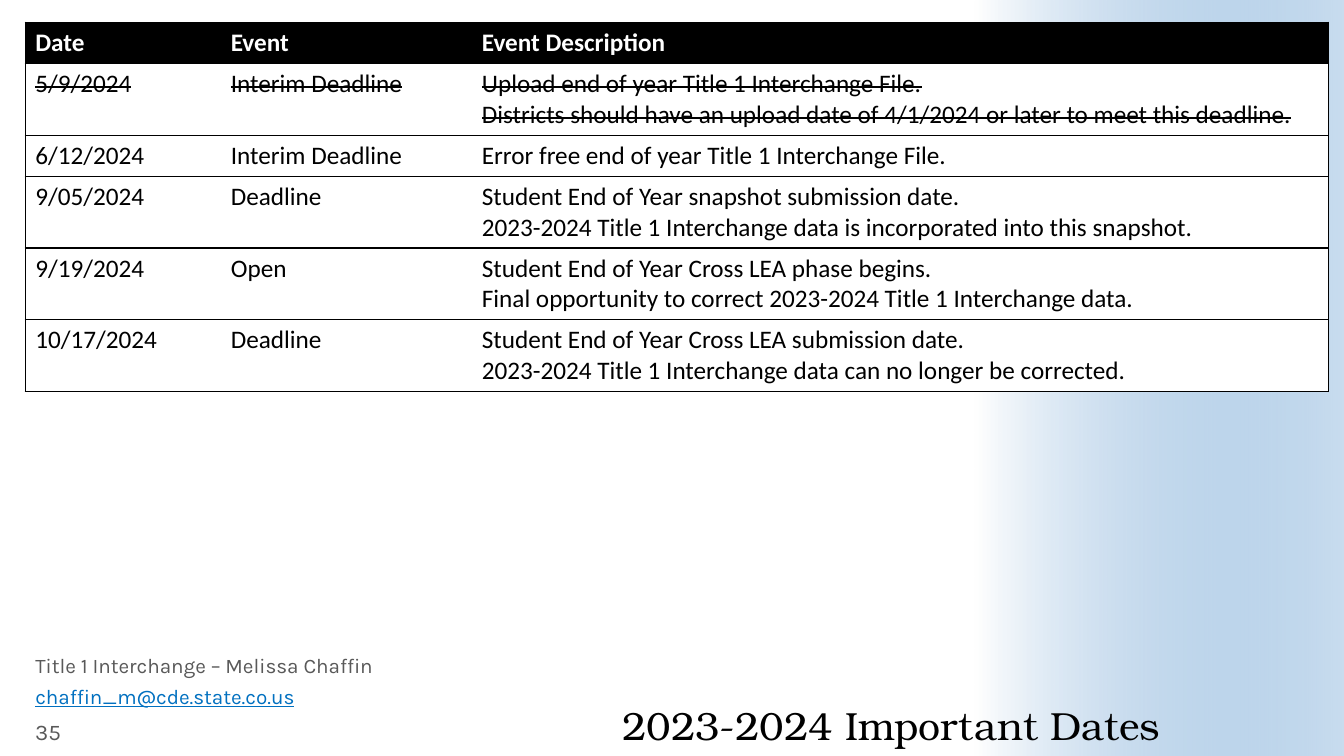
from dataclasses import dataclass

from lxml.etree import SubElement
from pptx import Presentation
from pptx.dml.color import RGBColor
from pptx.enum.shapes import MSO_SHAPE as Preset
from pptx.enum.text import MSO_ANCHOR as Anchor, MSO_AUTO_SIZE as AutoSize, PP_ALIGN as Align
from pptx.oxml.ns import qn
from pptx.util import Inches, Pt


@dataclass(frozen=True)
class Theme:
    black: str = "000000"
    white: str = "FFFFFF"
    blue: str = "488BC9"
    grey: str = "595959"
    link: str = "0070C0"
    title_font: str = "TeX Gyre Bonum"
    table_font: str = "Calibri"
    footer_font: str = "Karla"
    title_size: float = 28
    table_size: float = 18
    contact_size: float = 14.8
    number_size: float = 16


THEME = Theme()
WIDTH, HEIGHT = 13.33, 7.5
MARGIN = 0.25
COLUMNS = (1.94, 2.49, 8.5)
LINE_HEIGHT, ROW_PADDING = 0.3, 0.11

HEADINGS = ("Date", "Event", "Event Description")
PAST_DATES = {"5/9/2024"}
DATES = (
    ("5/9/2024", "Interim Deadline",
     "Upload end of year Title 1 Interchange File.\n"
     "Districts should have an upload date of 4/1/2024 or later to meet this deadline."),
    ("6/12/2024", "Interim Deadline", "Error free end of year Title 1 Interchange File."),
    ("9/05/2024", "Deadline",
     "Student End of Year snapshot submission date.\n"
     "2023-2024 Title 1 Interchange data is incorporated into this snapshot."),
    ("9/19/2024", "Open",
     "Student End of Year Cross LEA phase begins.\n"
     "Final opportunity to correct 2023-2024 Title 1 Interchange data."),
    ("10/17/2024", "Deadline",
     "Student End of Year Cross LEA submission date.\n"
     "2023-2024 Title 1 Interchange data can no longer be corrected."),
)
CONTACT = (("Title 1 Interchange – Melissa Chaffin", THEME.grey, False),
           ("chaffin_m@cde.state.co.us", THEME.link, True))


def rgb(code):
    return RGBColor.from_string(code)


def set_font(font, name, size, color, bold=False, underline=False):
    font.name, font.size = name, Pt(size)
    font.color.rgb = rgb(color)
    font.bold, font.underline = bold, underline


def place(shape, box):
    shape.left, shape.top, shape.width, shape.height = map(Inches, box)


def add_fade(slide, width):
    """Fade from white to pale blue at the right edge, behind everything else."""
    left, top = WIDTH - width / 2 - HEIGHT / 2, (HEIGHT - width) / 2
    fade = slide.shapes.add_shape(Preset.RECTANGLE, *map(Inches, (left, top, HEIGHT, width)))
    fade.rotation = 270
    fade.shadow.inherit = False
    fade.line.fill.background()
    fade.fill.gradient()
    fade.fill.gradient_angle = 270
    for stop, color in zip(fade.fill.gradient_stops, (THEME.white, THEME.blue)):
        stop.color.rgb = rgb(color)
    blue_stop = list(fade._element.iter(qn("a:srgbClr")))[-1]
    SubElement(blue_stop, qn("a:alpha"), val="30000")
    slide.shapes._spTree.insert(2, fade._element)


def add_title(title, box):
    place(title, box)
    frame = title.text_frame
    frame.text = "2023-2024 Important Dates"
    frame.auto_size, frame.vertical_anchor = AutoSize.NONE, Anchor.BOTTOM
    frame.margin_left = frame.margin_right = frame.margin_top = frame.margin_bottom = 0
    heading = frame.paragraphs[0]
    heading.alignment, heading.line_spacing = Align.RIGHT, 0.9
    set_font(heading.font, THEME.title_font, THEME.title_size, THEME.black)


def draw_borders(cell, sides):
    properties = cell._tc.get_or_add_tcPr()
    for side in "LRTB":
        shown = side in sides
        border = SubElement(properties, qn(f"a:ln{side}"), w=str(Pt(1)))
        fill = SubElement(border, qn("a:solidFill" if shown else "a:noFill"))
        if shown:
            SubElement(fill, qn("a:srgbClr"), val=THEME.black)


def add_dates(slide, left, top):
    rows = (HEADINGS, *DATES)
    heights = [ROW_PADDING + LINE_HEIGHT * (row[-1].count("\n") + 1) for row in rows]
    box = map(Inches, (left, top, sum(COLUMNS), sum(heights)))
    table = slide.shapes.add_table(len(rows), len(COLUMNS), *box).table
    table.horz_banding = False
    for column, width in zip(table.columns, COLUMNS):
        column.width = Inches(width)
    outer_sides = ("L", "", "R")
    for r, (row, height) in enumerate(zip(rows, heights)):
        table.rows[r].height = Inches(height)
        header = r == 0
        for c, wording in enumerate(row):
            cell = table.cell(r, c)
            cell.text = wording
            draw_borders(cell, "TB" + outer_sides[c])
            cell.fill.solid()
            cell.fill.fore_color.rgb = rgb(THEME.black if header else THEME.white)
            for line in cell.text_frame.paragraphs:
                set_font(line.font, THEME.table_font, THEME.table_size,
                         THEME.white if header else THEME.black, bold=header)
                if row[0] in PAST_DATES:
                    line.font._rPr.set("strike", "sngStrike")


def add_footer(slide, holders, left, top, width, line_height):
    """Two contact lines with the slide number below them."""
    for i, (holder, (wording, color, underline)) in enumerate(zip(holders, CONTACT)):
        place(holder, (left, top + i * line_height, width, line_height))
        frame = holder.text_frame
        frame.text = wording
        frame.auto_size = AutoSize.NONE
        contact = frame.paragraphs[0]
        contact.line_spacing, contact.space_before = 0.8, Pt(0)
        properties = contact._p.get_or_add_pPr()
        properties.set("marL", "0")
        properties.set("indent", "0")
        SubElement(properties, qn("a:buNone"))
        set_font(contact.font, THEME.footer_font, THEME.contact_size, color, underline=underline)

    number_box = (left, top + len(CONTACT) * line_height, 0.85, line_height)
    frame = slide.shapes.add_textbox(*map(Inches, number_box)).text_frame
    frame.word_wrap, frame.vertical_anchor = True, Anchor.MIDDLE
    frame.text = "35"
    set_font(frame.paragraphs[0].font, THEME.footer_font, THEME.number_size, THEME.grey)


def main():
    deck = Presentation()
    deck.slide_width, deck.slide_height = Inches(WIDTH), Inches(HEIGHT)
    slide = deck.slides.add_slide(deck.slide_layouts[3])
    title, *contact_holders = slide.placeholders
    add_fade(slide, 3.66)
    add_title(title, (4.26, 6.45, 7.24, 0.98))
    add_dates(slide, MARGIN, 0.22)
    add_footer(slide, contact_holders, MARGIN, 6.47, 3.89, 0.315)
    deck.save("out.pptx")


if __name__ == "__main__":
    main()
